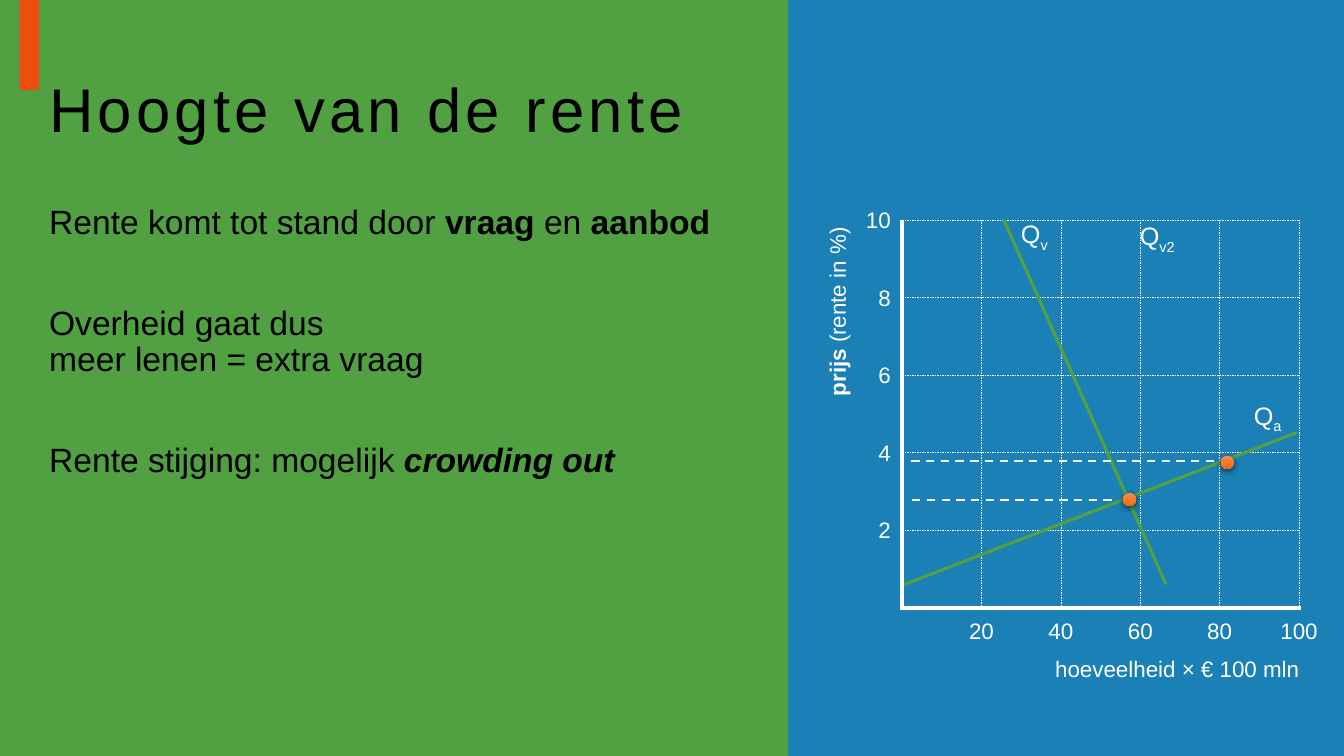
from pptx import Presentation
from pptx.dml.color import RGBColor
from pptx.enum.dml import MSO_LINE
from pptx.enum.shapes import MSO_CONNECTOR, MSO_SHAPE
from pptx.enum.text import MSO_ANCHOR, PP_ALIGN
from pptx.oxml import parse_xml
from pptx.oxml.ns import nsdecls
from pptx.util import Pt

BLACK, WHITE = "000000", "FFFFFF"
GREEN, BLUE, ORANGE = "51A041", "1A80B6", "ED4D0F"
LEFT, BOTTOM = 644.4, 434.2
QUANTITY_STEP, PRICE_STEP = 2.835, 27.72
LABEL_HEIGHT = 26.6


def color(value):
    return RGBColor.from_string(value)


def at_quantity(quantity):
    return LEFT + QUANTITY_STEP * quantity


def at_price(price):
    return BOTTOM - PRICE_STEP * price


class SlideBuilder:
    font = "Arial"

    def __init__(self, page):
        self.page = page

    def style(self, span, size, ink, bold=False, italic=False, **attributes):
        font = span.font
        font.name, font.size = self.font, Pt(size)
        font.bold, font.italic = bold, italic
        font.color.rgb = color(ink)
        for name, value in attributes.items():
            span._r.get_or_add_rPr().set(name, value)

    def add_spans(self, para, spans, size, ink):
        for text, options in spans:
            for index, line in enumerate(text.split("\n")):
                if index:
                    para.add_line_break()
                span = para.add_run()
                span.text = line
                self.style(span, size, ink, **options)

    def panel(self, left, top, width, height, fill):
        box = self.page.shapes.add_shape(
            MSO_SHAPE.RECTANGLE, Pt(left), Pt(top), Pt(width), Pt(height))
        box.shadow.inherit = False
        box.fill.solid()
        box.fill.fore_color.rgb = color(fill)
        box.line.fill.background()

    def title(self, text, left, top, width, height):
        box = self.page.shapes.title
        box.left, box.top, box.width, box.height = Pt(left), Pt(top), Pt(width), Pt(height)
        frame = box.text_frame
        frame.text = text
        frame.vertical_anchor = MSO_ANCHOR.MIDDLE
        para = frame.paragraphs[0]
        para.alignment = PP_ALIGN.LEFT
        para.line_spacing = 0.9
        self.style(para.runs[0], 44, BLACK, spc="300")
        self.page.shapes._spTree.append(box._element)

    def body(self, paragraphs, left, top, width, height):
        box = self.page.shapes.add_textbox(Pt(left), Pt(top), Pt(width), Pt(height))
        frame = box.text_frame
        frame.word_wrap = True
        for index, spans in enumerate(paragraphs):
            para = frame.add_paragraph() if index else frame.paragraphs[0]
            para.line_spacing = 0.9
            para.space_before = Pt(46 if index else 10)
            self.add_spans(para, spans, 24, BLACK)

    def label(self, spans, left, top, width, height=LABEL_HEIGHT, size=16,
              align=PP_ALIGN.LEFT, rotation=0):
        box = self.page.shapes.add_textbox(Pt(left), Pt(top), Pt(width), Pt(height))
        box.rotation = rotation
        box.text_frame.word_wrap = False
        para = box.text_frame.paragraphs[0]
        para.alignment = align
        self.add_spans(para, spans, size, WHITE)

    def line(self, start, end, ink, width, dashed=False):
        line = self.page.shapes.add_connector(
            MSO_CONNECTOR.STRAIGHT,
            Pt(at_quantity(start[0])), Pt(at_price(start[1])),
            Pt(at_quantity(end[0])), Pt(at_price(end[1])))
        line.line.color.rgb = color(ink)
        line.line.width = Pt(width)
        if dashed:
            line.line.dash_style = MSO_LINE.DASH
        line._element.spPr.append(parse_xml(f"<a:effectLst {nsdecls('a')}/>"))

    def dot(self, quantity, price, size=9.4):
        dot = self.page.shapes.add_shape(
            MSO_SHAPE.OVAL, Pt(at_quantity(quantity) - size / 2),
            Pt(at_price(price) - size / 2), Pt(size), Pt(size))
        dot.line.fill.background()
        stops = "".join(
            f'<a:gs pos="{place}"><a:srgbClr val="{value}"/></a:gs>'
            for place, value in ((0, "F18C57"), (50000, "F67B28"), (100000, "E56C19")))
        properties = dot._element.spPr
        properties.insert(2, parse_xml(
            f'<a:gradFill {nsdecls("a")}><a:gsLst>{stops}</a:gsLst>'
            '<a:lin ang="5400000" scaled="0"/></a:gradFill>'))
        properties.append(parse_xml(
            f'<a:effectLst {nsdecls("a")}>'
            '<a:outerShdw blurRad="57150" dist="19050" dir="5400000" rotWithShape="0">'
            f'<a:srgbClr val="{BLACK}"><a:alpha val="63000"/></a:srgbClr>'
            '</a:outerShdw></a:effectLst>'))


def main():
    deck = Presentation()
    deck.slide_width, deck.slide_height = Pt(960), Pt(540)
    slide = SlideBuilder(deck.slides.add_slide(deck.slide_layouts[5]))

    slide.panel(0, 0, 563, 540, GREEN)
    slide.panel(563, 0, 397, 540, BLUE)
    slide.panel(14, 0, 14, 64.5, ORANGE)

    slide.title("Hoogte van de rente", 28, 28, 908, 104.4)
    bold = {"bold": True}
    slide.body([
        [("Rente komt tot stand door ", {}), ("vraag", bold), (" en ", {}), ("aanbod", bold)],
        [("Overheid gaat dus\nmeer lenen = extra vraag", {})],
        [("Rente stijging: mogelijk ", {}), ("crowding out", {"bold": True, "italic": True})],
    ], 28, 143.3, 514, 342.7)

    for price in range(2, 11, 2):
        slide.line((0, price), (100, price), WHITE, 0.25, dashed=True)
        slide.label([(str(price), {})], 603.3, at_price(price) - LABEL_HEIGHT / 2, 40,
                    align=PP_ALIGN.RIGHT)
    for quantity in range(20, 101, 20):
        slide.line((quantity, 10), (quantity, 0), WHITE, 0.25, dashed=True)
        slide.label([(str(quantity), {})], at_quantity(quantity) - 21, 437, 42,
                    align=PP_ALIGN.CENTER)
    slide.label([("hoeveelheid × € 100 mln", {})], 746.6, 464.4, 190.8)
    slide.label([("prijs", bold), (" (rente in %)", {})], 529.2, 208.1, 137.5, rotation=270)

    slide.line((25.6, 10), (66.5, 0.6), GREEN, 2.25)
    slide.line((0.5, 0.6), (99.5, 4.52), GREEN, 2.25)
    slide.line((0, 10), (0, 0), WHITE, 3)
    slide.line((100.5, 0), (-0.5, 0), WHITE, 3)
    for mark, left, top in (("v", 722.2, 152.6), ("a", 888.5, 282.2), ("v2", 807.1, 154.1)):
        slide.label([("Q", {}), (mark, {"baseline": "-25000"})], left, top, 42, 29, size=18)

    for start, end, price in ((2.5, 54.3, 2.79), (2.3, 78.5, 3.79)):
        slide.line((start, price), (end, price), WHITE, 1.5, dashed=True)
    slide.dot(57.3, 2.79)
    slide.dot(81.9, 3.75)

    deck.save("out.pptx")


if __name__ == "__main__":
    main()
